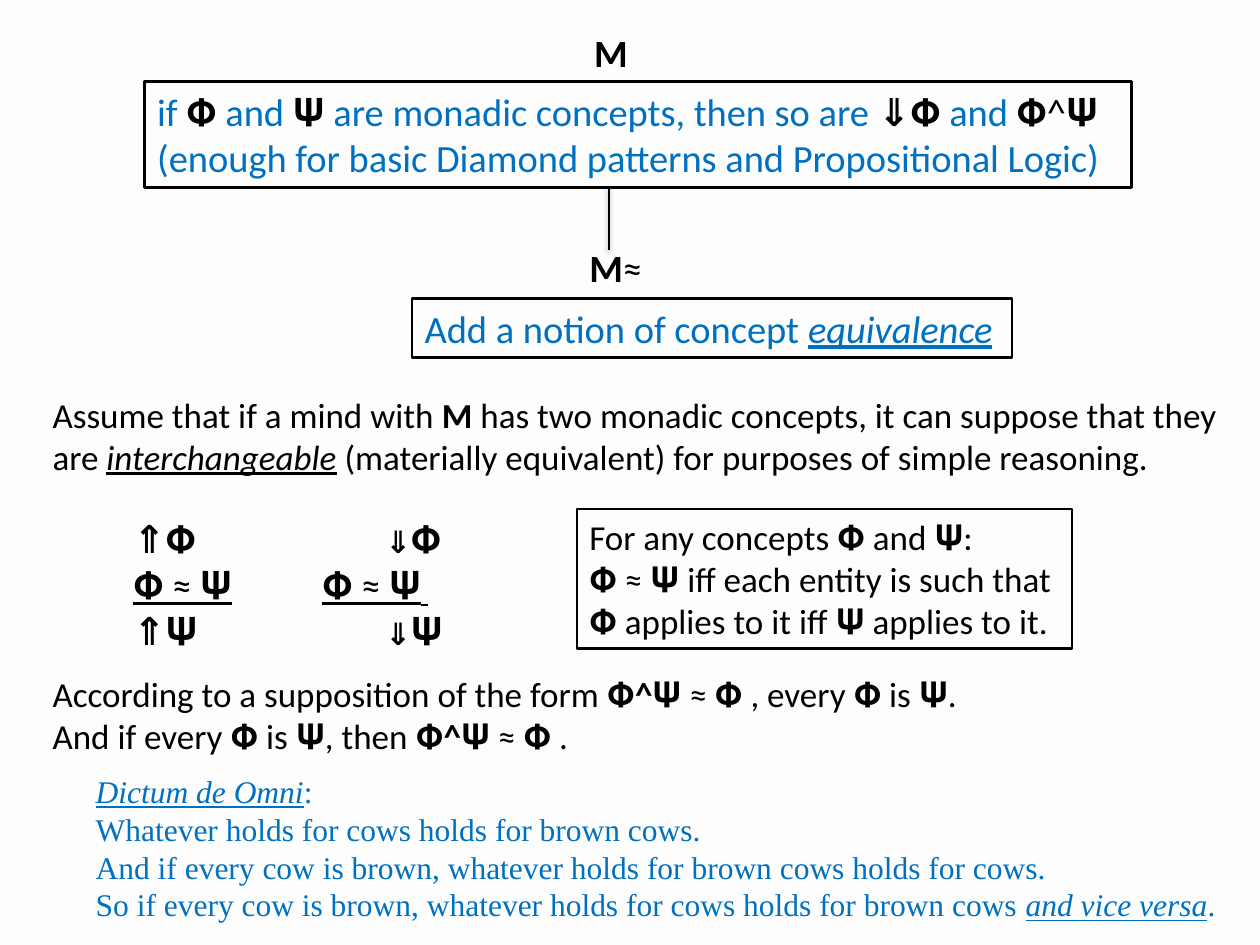
from lxml import etree
from pptx import Presentation
from pptx.dml.color import RGBColor
from pptx.enum.shapes import MSO_CONNECTOR, MSO_SHAPE
from pptx.enum.text import MSO_ANCHOR, MSO_AUTO_SIZE, PP_ALIGN
from pptx.oxml import parse_xml
from pptx.oxml.ns import nsdecls, qn
from pptx.util import Cm, Pt

STRAIGHT = MSO_CONNECTOR.STRAIGHT
RECTANGLE = MSO_SHAPE.RECTANGLE
TOP = MSO_ANCHOR.TOP
LEFT = PP_ALIGN.LEFT
GROW = MSO_AUTO_SIZE.SHAPE_TO_FIT_TEXT

COLORS = {"paper": "FDFDFD", "ink": "000000", "blue": "0070C0"}
BODY_FONT = "Calibri"
QUOTE_FONT = "Times New Roman"


def rgb(name):
    return RGBColor.from_string(COLORS[name])


def add_run(paragraph, text, size, font, color, marks=""):
    """Marks: b bold, i italic, u underlined, s small capitals."""
    run = paragraph.add_run()
    run.text = text
    run.font.size = Pt(size)
    run.font.name = font
    run.font.color.rgb = rgb(color)
    run.font.bold = "b" in marks
    run.font.italic = "i" in marks
    run.font.underline = "u" in marks
    if "s" in marks:
        run.font._element.set("cap", "small")


def fill_text(shape, lines, size, color="ink", font=BODY_FONT):
    """Each line is a list of runs: (text, marks, colour), the last two optional."""
    frame = shape.text_frame
    frame.word_wrap = True
    frame.auto_size = GROW
    frame.vertical_anchor = TOP
    for index, line in enumerate(lines):
        paragraph = frame.paragraphs[0] if index == 0 else frame.add_paragraph()
        paragraph.alignment = LEFT
        for text, marks, run_color in ((*run, "", color)[:3] if len(run) == 1
                                       else (*run, color)[:3] for run in line):
            add_run(paragraph, text, size, font, run_color, marks)
    return shape


def add_text(slide, box, lines, size, **style):
    shape = slide.shapes.add_textbox(*map(Cm, box))
    return fill_text(shape, lines, size, **style)


def add_frame(slide, box, lines, size, **style):
    shape = slide.shapes.add_shape(RECTANGLE, *map(Cm, box))
    shape.shadow.inherit = False
    shape.fill.background()
    shape.line.color.rgb = rgb("ink")
    shape.line.width = Pt(1.5)
    return fill_text(shape, lines, size, **style)


def add_link(slide, x, top, bottom):
    """Vertical line with a soft shadow below it."""
    link = slide.shapes.add_connector(STRAIGHT, Cm(x), Cm(top), Cm(x), Cm(bottom))
    link.line.color.rgb = rgb("ink")
    link.line.width = Pt(1)
    link._element.spPr.append(parse_xml(
        f'<a:effectLst {nsdecls("a")}><a:outerShdw blurRad="39370" dist="20320" '
        f'dir="5400000" rotWithShape="0"><a:srgbClr val="{COLORS["ink"]}">'
        '<a:alpha val="38000"/></a:srgbClr></a:outerShdw></a:effectLst>'))


def set_tab(paragraph, position):
    tabs = etree.SubElement(paragraph._p.get_or_add_pPr(), qn("a:tabLst"))
    etree.SubElement(tabs, qn("a:tab"), pos=str(Cm(position)), algn="l")


def arrow_line(symbol):
    return [("⇑", "b"), (symbol + "\t",), ("⇓", "bs"), (symbol,)]


def main():
    presentation = Presentation()
    presentation.slide_width, presentation.slide_height = Cm(25.4), Cm(19.05)
    slide = presentation.slides.add_slide(presentation.slide_layouts[6])
    slide.background.fill.solid()
    slide.background.fill.fore_color.rgb = rgb("paper")

    # Minds M and M≈
    add_text(slide, (11.73, 0.46, 1.93, 1.19), [[("M", "b")]], 22)
    add_frame(slide, (2.92, 1.65, 19.89, 2.13), [
        [("if ",), ("𝚽 ", "", "ink"), ("and ",), ("𝚿 ", "", "ink"),
         ("are monadic concepts, then so are ",), ("⇓", "b", "ink"),
         ("𝚽 ", "", "ink"), ("and ",), ("𝚽^𝚿", "", "ink")],
        [("(enough for basic Diamond patterns and Propositional Logic)",)],
    ], 22, color="blue")
    add_frame(slide, (8.31, 6.02, 12.09, 1.19), [
        [("Add a notion of concept ",), ("equivalence", "iu"), (" ",)],
    ], 22, color="blue")
    add_text(slide, (11.63, 4.8, 1.6, 1.19), [[("M", "b"), ("≈",)]], 22)
    add_link(slide, 12.27, 3.78, 5.03)

    # Assumption
    add_text(slide, (0.81, 7.8, 24.79, 5.38), [
        [("Assume that if a mind with ",), ("M", "b"),
         (" has two monadic concepts, it can suppose that they are ",),
         ("interchangeable", "iu"),
         (" (materially equivalent) for purposes of simple reasoning.",)],
    ], 20)

    # Inference patterns, with the second column set by tab stops
    patterns = add_text(slide, (2.44, 10.26, 11.73, 3.07), [
        arrow_line("𝚽"),
        [("𝚽 ≈ 𝚿", "u"), ("\t",), ("𝚽 ≈ 𝚿", "u"), (" ", "us")],
        arrow_line("𝚿"),
    ], 22)
    for paragraph, position in zip(patterns.text_frame.paragraphs, (5.08, 3.81, 5.08)):
        set_tab(paragraph, position)

    # Meaning of equivalence
    add_frame(slide, (11.63, 10.26, 9.98, 2.82), [
        [("For any concepts 𝚽 and 𝚿:",)],
        [("𝚽 ≈ 𝚿 iff each entity is such that",)],
        [("𝚽 applies to it iff 𝚿 applies to it.",)],
    ], 20)

    # Consequence
    add_text(slide, (0.81, 13.44, 19.58, 1.96), [
        [("According to a supposition of the form 𝚽",), ("^", "b"),
         ("𝚿 ≈ 𝚽 , every 𝚽 is 𝚿.",)],
        [("And if every 𝚽 is 𝚿, then 𝚽",), ("^", "b"), ("𝚿 ≈ 𝚽 .",)],
    ], 20)

    # Dictum de Omni
    add_text(slide, (1.68, 15.44, 23.11, 3.33), [
        [("Dictum de Omni", "iu"), (":",)],
        [("Whatever holds for cows holds for brown cows.",)],
        [("And if every cow is brown, whatever holds for brown cows holds for cows.",)],
        [("So if every cow is brown, whatever holds for cows holds for brown cows ",),
         ("and vice versa", "iu"), (".",)],
    ], 18, color="blue", font=QUOTE_FONT)

    presentation.save("out.pptx")


if __name__ == "__main__":
    main()
